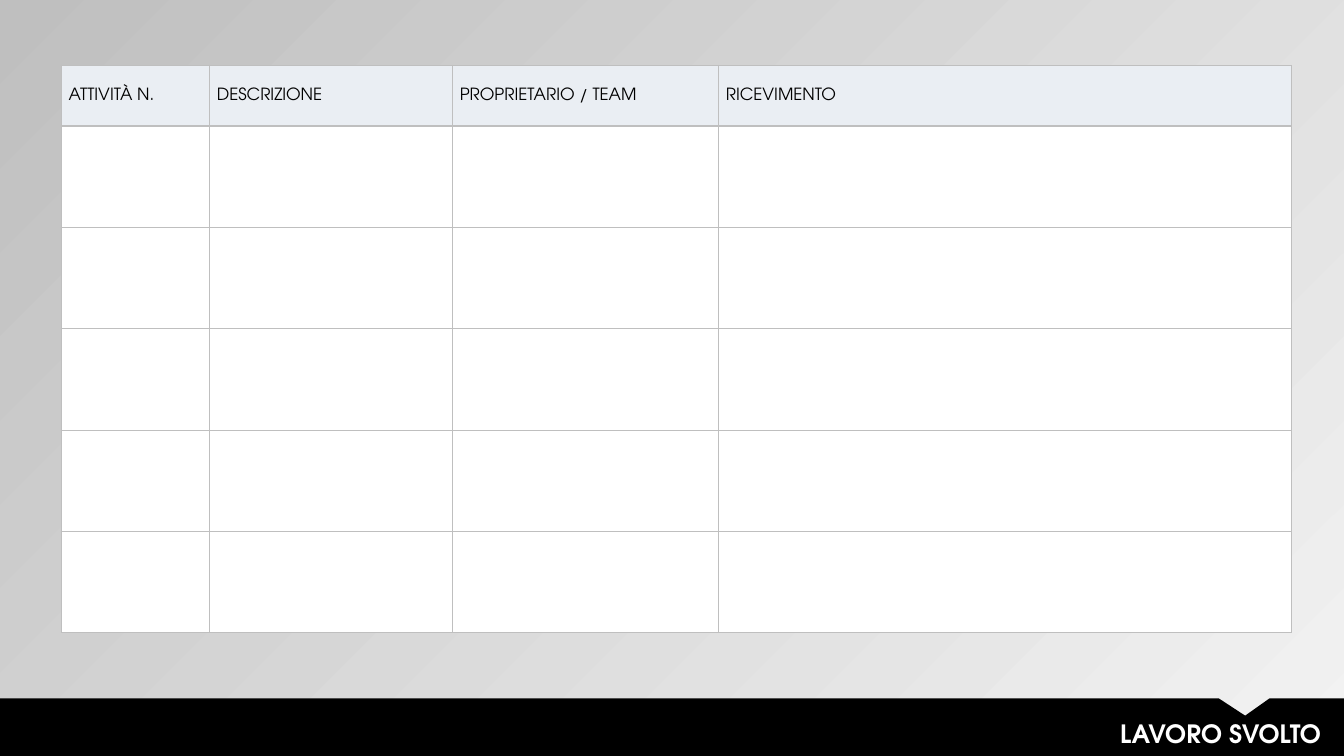
"""Build the work log slide: an empty activity table above a notched footer bar."""
from dataclasses import dataclass

from lxml import etree
from pptx import Presentation
from pptx.dml.color import RGBColor
from pptx.enum.text import MSO_ANCHOR, MSO_AUTO_SIZE, PP_ALIGN
from pptx.oxml.ns import qn
from pptx.slide import Slide
from pptx.table import _Cell
from pptx.text.text import TextFrame
from pptx.util import Emu, Inches, Pt

MIDDLE = MSO_ANCHOR.MIDDLE
GROW = MSO_AUTO_SIZE.SHAPE_TO_FIT_TEXT
LEFT, RIGHT = PP_ALIGN.LEFT, PP_ALIGN.RIGHT

SLIDE_WIDTH, SLIDE_HEIGHT = Inches(13.333), Inches(7.5)
FONT = "TeX Gyre Adventor"
COLORS = {
    "light": "F2F2F2",
    "grey": "BFBFBF",
    "header": "EAEEF3",
    "white": "FFFFFF",
    "black": "000000",
}
BLANK_LAYOUT = 6
BORDER_SIDES = ("a:lnL", "a:lnR", "a:lnT", "a:lnB")
BORDER_WIDTH = Pt(1)


@dataclass(frozen=True)
class Column:
    title: str
    width: float


COLUMNS = [
    Column("ATTIVITÀ N.", 11.03),
    Column("DESCRIZIONE", 18.08),
    Column("PROPRIETARIO / TEAM", 19.8),
    Column("RICEVIMENTO", 42.61),
]
TABLE_LEFT, TABLE_TOP = 4.58, 8.67
ROW_HEIGHTS = [8] + [13.41] * 5

FOOTER_TOP, NOTCH_BOTTOM = 92.4, 94.67
FOOTER_OUTLINE = [
    (0, FOOTER_TOP),
    (90.7, FOOTER_TOP),
    (92.65, NOTCH_BOTTOM),
    (94.45, FOOTER_TOP),
    (100, FOOTER_TOP),
    (100, 100),
    (0, 100),
]
TITLE_BOX = (31.06, 94.4, 67.97, 5.33)


def across(percent: float) -> Emu:
    """Return a share of the slide's width."""
    return Emu(round(SLIDE_WIDTH * percent / 100))


def down(percent: float) -> Emu:
    """Return a share of the slide's height."""
    return Emu(round(SLIDE_HEIGHT * percent / 100))


def color(name: str) -> RGBColor:
    """Return a palette colour."""
    return RGBColor.from_string(COLORS[name])


def write_text(frame: TextFrame, text: str, *, size: float, color_name: str,
               bold: bool = False, align: PP_ALIGN = LEFT) -> None:
    """Write one formatted paragraph into a text frame."""
    paragraph = frame.paragraphs[0]
    paragraph.alignment = align
    run = paragraph.add_run()
    run.text = text
    run.font.name = FONT
    run.font.size = Pt(size)
    run.font.bold = bold
    run.font.color.rgb = color(color_name)


def paint_background(slide: Slide) -> None:
    """Fill the slide with a diagonal gradient, lightest at bottom right."""
    fill = slide.background.fill
    fill.gradient()
    fill.gradient_angle = 135
    for stop, name, position in zip(fill.gradient_stops, ("light", "grey"), (0, 1)):
        stop.color.rgb = color(name)
        stop.position = position


def format_cell(cell: _Cell, fill_name: str) -> None:
    """Give a cell its borders and fill."""
    properties = cell._tc.get_or_add_tcPr()
    for side in BORDER_SIDES:
        line = etree.SubElement(properties, qn(side), w=str(BORDER_WIDTH))
        solid = etree.SubElement(line, qn("a:solidFill"))
        etree.SubElement(solid, qn("a:srgbClr"), val=COLORS["grey"])
    cell.fill.solid()
    cell.fill.fore_color.rgb = color(fill_name)


def add_activity_table(slide: Slide) -> None:
    """Add the table with a titled header and empty rows."""
    total_width = sum(column.width for column in COLUMNS)
    table = slide.shapes.add_table(
        len(ROW_HEIGHTS), len(COLUMNS), across(TABLE_LEFT), down(TABLE_TOP),
        across(total_width), down(sum(ROW_HEIGHTS)),
    ).table
    table.first_row = table.horz_banding = False
    for row, height in zip(table.rows, ROW_HEIGHTS):
        row.height = down(height)
    for index, column in enumerate(COLUMNS):
        table.columns[index].width = across(column.width)
        header = table.cell(0, index)
        header.vertical_anchor = MIDDLE
        header.margin_left = header.margin_right = Inches(0.07)
        header.margin_top = header.margin_bottom = 0
        write_text(header.text_frame, column.title, size=12, color_name="black")
    for position, cell in enumerate(table.iter_cells()):
        format_cell(cell, "header" if position < len(COLUMNS) else "white")


def add_footer(slide: Slide) -> None:
    """Add the notched bar and the slide title on it."""
    points = [(across(x), down(y)) for x, y in FOOTER_OUTLINE]
    builder = slide.shapes.build_freeform(*points[0])
    builder.add_line_segments(points[1:], close=True)
    bar = builder.convert_to_shape()
    bar.shadow.inherit = False
    bar.fill.solid()
    bar.fill.fore_color.rgb = color("black")
    bar.line.fill.background()

    left, top, width, height = TITLE_BOX
    title = slide.shapes.add_textbox(across(left), down(top), across(width), down(height))
    title.text_frame.word_wrap = True
    title.text_frame.auto_size = GROW
    write_text(title.text_frame, "LAVORO SVOLTO", size=18, color_name="white",
               bold=True, align=RIGHT)


def main() -> None:
    """Build and save the presentation."""
    presentation = Presentation()
    presentation.slide_width = SLIDE_WIDTH
    presentation.slide_height = SLIDE_HEIGHT
    slide = presentation.slides.add_slide(presentation.slide_layouts[BLANK_LAYOUT])
    paint_background(slide)
    add_activity_table(slide)
    add_footer(slide)
    presentation.save("out.pptx")


if __name__ == "__main__":
    main()
